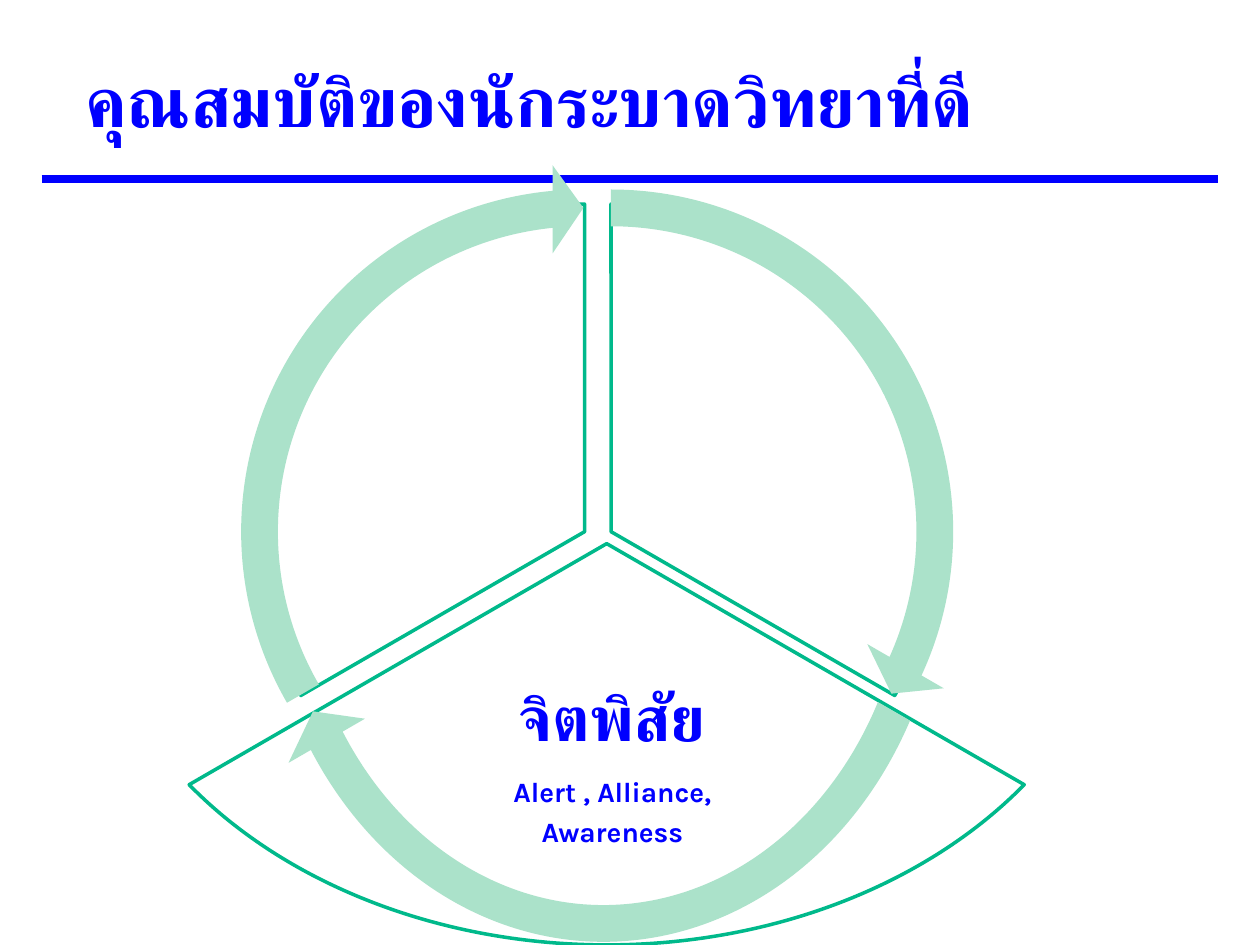
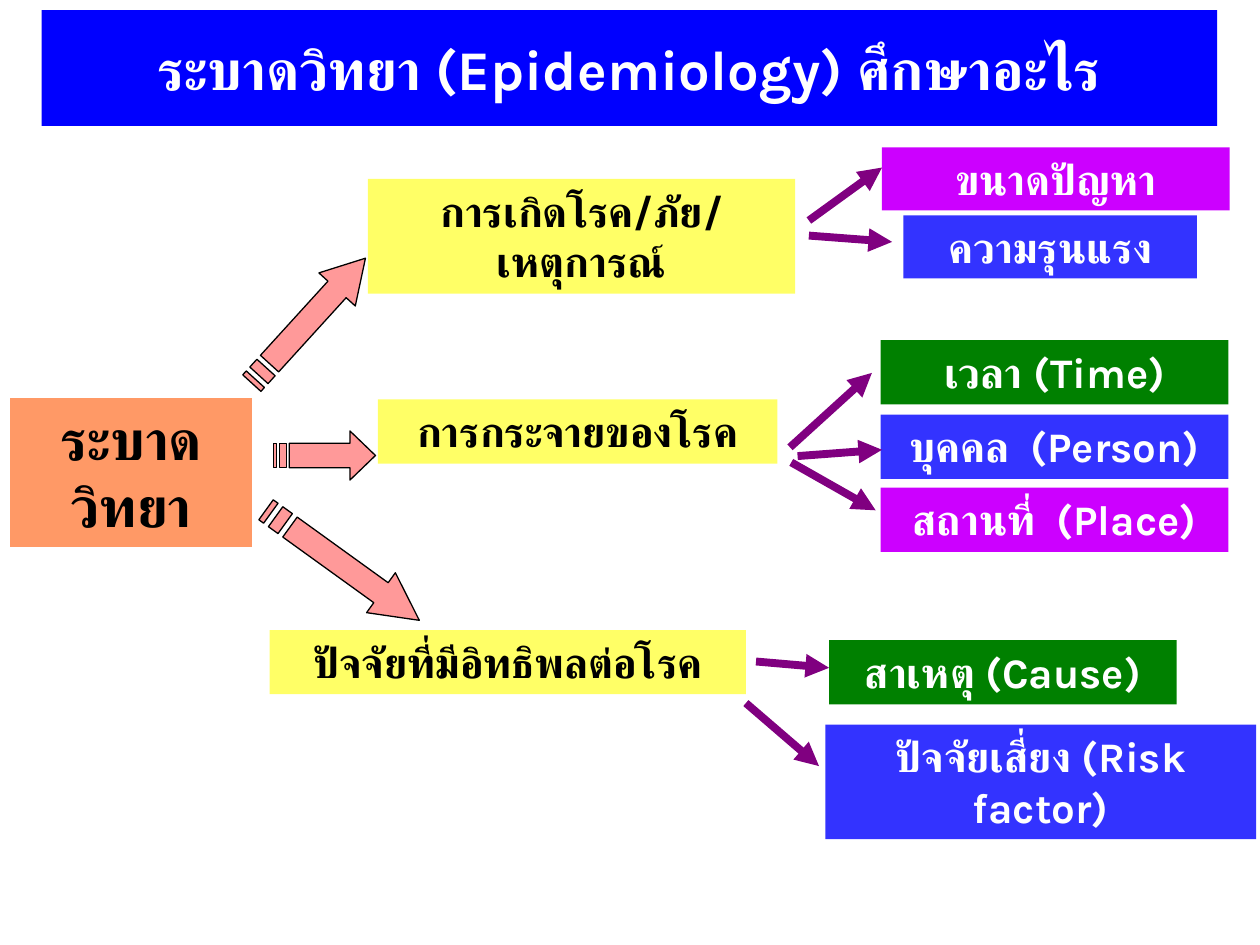
from pptx import Presentation
from pptx.dml.color import RGBColor
from pptx.enum.shapes import MSO_CONNECTOR, MSO_SHAPE
from pptx.enum.text import MSO_ANCHOR, MSO_AUTO_SIZE, PP_ALIGN
from pptx.oxml.ns import qn
from pptx.util import Inches, Pt
from lxml import etree

WHITE = RGBColor(0xFF, 0xFF, 0xFF)
BLACK = RGBColor(0, 0, 0)
BLUE = RGBColor(0, 0, 0xFF)
TEAL = RGBColor(0x00, 0xB9, 0x8B)
MINT = RGBColor(0xAB, 0xE2, 0xCA)
ORANGE = RGBColor(0xFF, 0x99, 0x66)
YELLOW = RGBColor(0xFF, 0xFF, 0x66)
PINK = RGBColor(0xFF, 0x99, 0x99)
GREEN = RGBColor(0, 0x80, 0)
INDIGO = RGBColor(0x33, 0x33, 0xFF)
VIOLET = RGBColor(0xCC, 0, 0xFF)
PURPLE = RGBColor(0x80, 0, 0x80)
FONT = "Karla"


class Deck:
    """Shared style and the current slide."""

    def __init__(self):
        self.prs = Presentation()
        self.prs.slide_width, self.prs.slide_height = Inches(10), Inches(7.5)
        self.s = None

    def text(self, p, words, size, color, align=PP_ALIGN.CENTER):
        p.alignment = align
        r = p.add_run()
        r.text = words
        for name, value in dict(name=FONT, size=Pt(size), bold=True).items():
            setattr(r.font, name, value)
        r.font.color.rgb = color
        # Thai text takes the complex-script font
        etree.SubElement(r._r.get_or_add_rPr(), qn("a:cs"), typeface=FONT)

    def paint(self, sp, fill, line=None, width=0.75):
        sp.shadow.inherit = False
        sp.fill.solid()
        sp.fill.fore_color.rgb = fill
        if line is None:
            sp.line.fill.background()
        else:
            sp.line.color.rgb = line
            sp.line.width = Pt(width)

    def slide(self, title, box, size, color, align, fill=None):
        self.s = self.prs.slides.add_slide(self.prs.slide_layouts[5])
        sp = self.s.shapes.title
        sp.left, sp.top, sp.width, sp.height = map(Inches, box)
        tf = sp.text_frame
        tf.auto_size, tf.vertical_anchor = MSO_AUTO_SIZE.NONE, MSO_ANCHOR.MIDDLE
        self.text(tf.paragraphs[0], title, size, color, align)
        if fill is not None:
            sp.fill.solid()
            sp.fill.fore_color.rgb = fill

    def shape(self, kind, box, fill, line=None, width=0.75, adjust=()):
        sp = self.s.shapes.add_shape(kind, *map(Inches, box))
        self.paint(sp, fill, line, width)
        for i, value in enumerate(adjust):
            sp.adjustments[i] = value
        return sp

    def label(self, words, box, fill, color=WHITE, size=24):
        tf = self.shape(MSO_SHAPE.RECTANGLE, box, fill).text_frame
        for name, value in dict(word_wrap=True, vertical_anchor=MSO_ANCHOR.TOP,
                                auto_size=MSO_AUTO_SIZE.SHAPE_TO_FIT_TEXT).items():
            setattr(tf, name, value)
        self.text(tf.paragraphs[0], words, size, color)

    def caption(self, lines, box, color):
        tf = self.s.shapes.add_textbox(*map(Inches, box)).text_frame
        tf.word_wrap, tf.vertical_anchor = True, MSO_ANCHOR.MIDDLE
        tf.margin_left = tf.margin_right = Inches(0.05)
        for i, (words, size) in enumerate(lines):
            p = tf.add_paragraph() if i else tf.paragraphs[0]
            p.line_spacing, p.space_after = 0.9, Pt(round(size * 0.37))
            self.text(p, words, size, color)

    def line(self, start, end, color, arrow=False):
        c = self.s.shapes.add_connector(MSO_CONNECTOR.STRAIGHT, *map(Inches, start + end))
        c.line.color.rgb, c.line.width = color, Pt(4.5)
        sp_pr = c._element.spPr
        if arrow:
            etree.SubElement(sp_pr.find(qn("a:ln")), qn("a:tailEnd"), type="triangle")
        etree.SubElement(sp_pr, qn("a:effectLst"))

    def striped_arrow(self, left, top, length, rotation=0):
        """Block arrow with two stripes behind it, in 32nds of its length."""
        height, unit = 0.39, length / 32
        upper, lower = height / 4, height * 3 / 4
        head = 24 * unit
        outlines = [[(head, 0), (head, upper), (5 * unit, upper), (5 * unit, lower),
                     (head, lower), (head, height), (length, height / 2)]]
        for a, b in ((2 * unit, 4 * unit), (0, unit)):
            outlines.append([(a, upper), (a, lower), (b, lower), (b, upper)])
        fb = None
        for outline in outlines:
            points = [(Inches(left + x), Inches(top + y)) for x, y in outline]
            if fb is None:
                fb = self.s.shapes.build_freeform(*points[0])
            else:
                fb.move_to(*points[0])
            fb.add_line_segments(points[1:], close=True)
        sp = fb.convert_to_shape()
        sp.rotation = rotation
        self.paint(sp, PINK, BLACK)


def qualities(d):
    d.slide("คุณสมบัติของนักระบาดวิทยาที่ดี", (0.58, 0.33, 8.67, 0.92), 40, BLUE, PP_ALIGN.LEFT)
    d.line((0.33, 1.42), (9.67, 1.42), BLUE)

    # Three sectors, angles in units of 1/0.6 degree
    for box, angles in (((2.25, 1.62, 5.2, 5.2), (162, 18)),
                        ((0.67, 1.13, 8.29, 6.37), (18, 90)),
                        ((2.04, 1.62, 5.2, 5.2), (90, 162))):
        d.shape(MSO_SHAPE.PIE, box, WHITE, TEAL, 2, angles)
    d.caption([("จิตพิสัย", 36), ("Alert , Alliance,", 16), ("Awareness", 16)],
              (2.64, 5.26, 4.44, 1.67), BLUE)

    # Arrows round the sectors
    for box, end, start in (((1.93, 1.3, 5.84, 5.84), 14.73, 161.99),
                            ((1.87, 0.95, 5.84, 6.73), 86.72, 18),
                            ((1.71, 1.3, 5.84, 5.84), 158.73, 90)):
        d.shape(MSO_SHAPE.CIRCULAR_ARROW, box, MINT,
                adjust=(0.05, 3.28, end, start, 0.06))


def scope(d):
    d.slide("ระบาดวิทยา (Epidemiology) ศึกษาอะไร", (0.33, 0.08, 9.33, 0.92), 32,
            WHITE, PP_ALIGN.CENTER, BLUE)

    # Root and its three branches
    d.label("ระบาดวิทยา", (0.08, 3.16, 1.92, 1.18), ORANGE, BLACK, 32)
    for words, box in (("การเกิดโรค/ภัย/เหตุการณ์", (2.92, 1.42, 3.39, 0.91)),
                       ("การกระจายของโรค", (3, 3.17, 3.17, 0.51)),
                       ("ปัจจัยที่มีอิทธิพลต่อโรค", (2.14, 5, 3.78, 0.51))):
        d.label(words, box, YELLOW, BLACK)
    d.striped_arrow(1.78, 2.35, 1.34, 312.3)
    d.striped_arrow(2.17, 3.42, 0.81)
    d.striped_arrow(1.97, 4.29, 1.5, 35.8)

    # Details, each with the arrow that leads to it
    for words, box, fill, start, end in (
            ("ขนาดปัญหา", (7, 1.17, 2.76, 0.5), VIOLET, (6.42, 1.75), (7, 1.33)),
            ("ความรุนแรง", (7.17, 1.71, 2.33, 0.5), INDIGO, (6.42, 1.87), (7.08, 1.92)),
            ("เวลา (Time)", (6.99, 2.7, 2.76, 0.51), GREEN, (6.27, 3.55), (6.92, 2.96)),
            ("บุคคล  (Person)", (6.99, 3.29, 2.76, 0.51), INDIGO, (6.33, 3.62), (7, 3.57)),
            ("สถานที่  (Place)", (6.99, 3.87, 2.76, 0.51), VIOLET, (6.28, 3.67), (6.95, 4.05)),
            ("สาเหตุ (Cause)", (6.58, 5.08, 2.76, 0.51), GREEN, (6, 5.25), (6.58, 5.3)),
            ("ปัจจัยเสี่ยง (Risk factor)", (6.55, 5.75, 3.42, 0.91), INDIGO,
             (5.92, 5.58), (6.5, 6.08))):
        d.label(words, box, fill)
        d.line(start, end, PURPLE, arrow=True)


def main():
    d = Deck()
    qualities(d)
    scope(d)
    d.prs.save("out.pptx")


if __name__ == "__main__":
    main()
